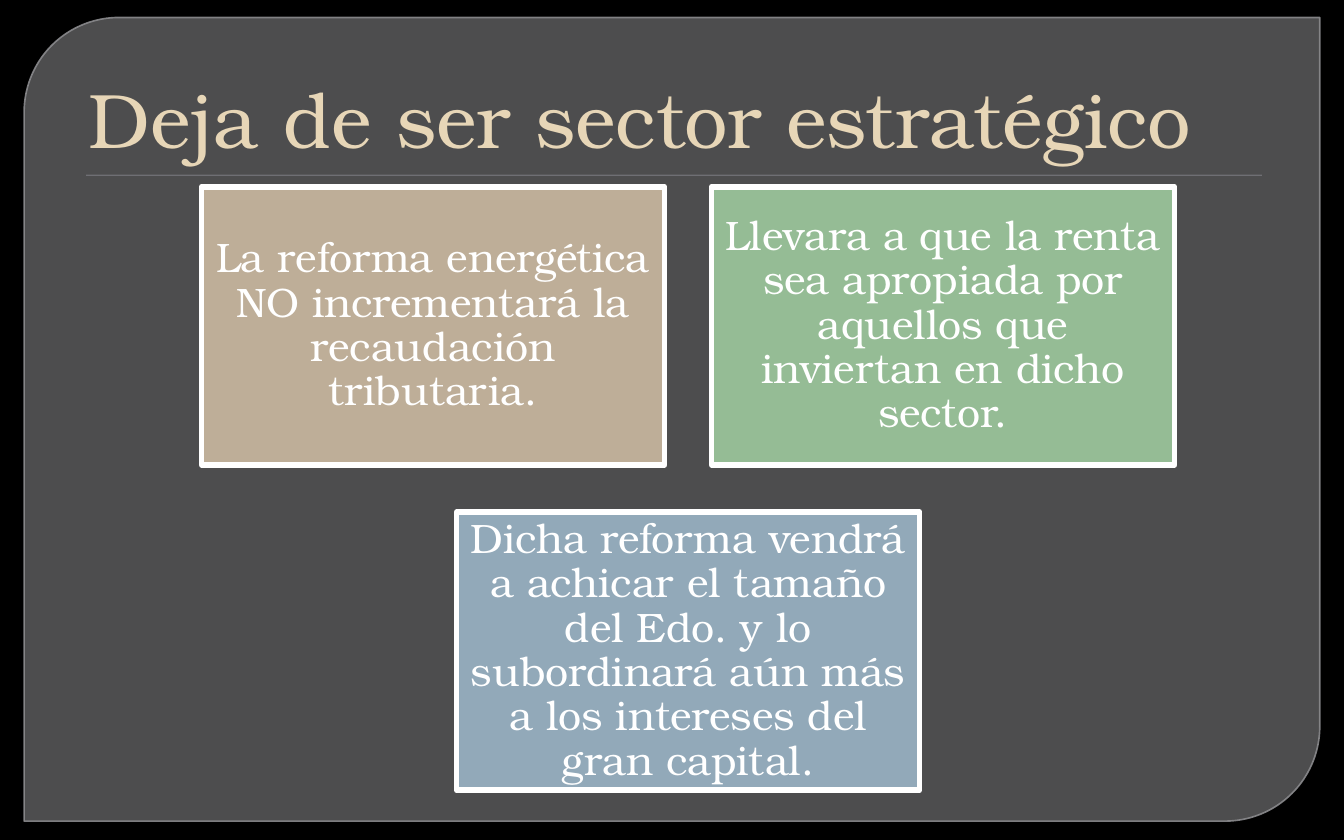
from lxml import etree
from pptx import Presentation
from pptx.dml.color import RGBColor
from pptx.enum.shapes import MSO_SHAPE
from pptx.enum.text import MSO_ANCHOR, PP_ALIGN
from pptx.oxml.ns import qn
from pptx.util import Inches, Pt

RECT = MSO_SHAPE.RECTANGLE
PANEL = MSO_SHAPE.ROUND_2_DIAG_RECTANGLE
MIDDLE, BOTTOM = MSO_ANCHOR.MIDDLE, MSO_ANCHOR.BOTTOM
LEFT, CENTER = PP_ALIGN.LEFT, PP_ALIGN.CENTER
FONT = "TeX Gyre Bonum"
COLORS = {
    "background": "000000", "panel": "777779", "panel_line": "8D8D90",
    "rule": "6F6F74", "title": "E7D6B7", "white": "FFFFFF",
    "tan": "BEAE98", "green": "95BC95", "blue": "92A9B9",
}
CARDS = [
    ("tan", "La reforma energética NO incrementará la recaudación tributaria."),
    ("green", "Llevara a que la renta sea apropiada por aquellos que "
              "inviertan en dicho sector."),
    ("blue", "Dicha reforma vendrá a achicar el tamaño del Edo. y lo "
             "subordinará aún más a los intereses del gran capital."),
]


def rgb(name):
    """Return the named colour."""
    return RGBColor.from_string(COLORS[name])


def set_alpha(fill, percent):
    """Make a solid fill partly transparent."""
    color = fill._xPr.find(qn("a:solidFill"))[0]
    etree.SubElement(color, qn("a:alpha"), val=str(percent * 1000))


def add_box(slide, kind, box, fill, line=None, width=0):
    """Add a filled shape with an optional outline."""
    sp = slide.shapes.add_shape(kind, *(Inches(v) for v in box))
    sp.shadow.inherit = False
    sp.fill.solid()
    sp.fill.fore_color.rgb = rgb(fill)
    if line:
        sp.line.color.rgb = rgb(line)
        sp.line.width = Pt(width)
    else:
        sp.line.fill.background()
    return sp


def write(sp, text, size, color, align, anchor):
    """Write one paragraph into a shape."""
    tf = sp.text_frame
    tf.word_wrap = True
    tf.vertical_anchor = anchor
    p = tf.paragraphs[0]
    p.alignment = align
    r = p.add_run()
    r.text = text
    r.font.name = FONT
    r.font.size = Pt(size)
    r.font.color.rgb = rgb(color)
    return tf


def add_panel(slide, box):
    """Draw the translucent panel with two rounded corners."""
    sp = add_box(slide, PANEL, box, "panel", "panel_line", 0.87)
    sp.adjustments[0] = 0.118
    sp.adjustments[1] = 0
    set_alpha(sp.fill, 65)
    set_alpha(sp.line.fill, 88)


def add_title(slide, box, text):
    """Place the title and the thin rule below it."""
    left, top, width, height = box
    sp = slide.shapes.add_textbox(*(Inches(v) for v in box))
    tf = write(sp, text, 41.4, "title", LEFT, BOTTOM)
    tf.margin_left = Inches(0.16)
    add_box(slide, RECT, (left + 0.14, top + height + 0.03, width - 0.25, 0.01),
            "rule")


def add_cards(slide, box, cards, columns=2, gap=0.35):
    """Lay out cards in rows, each row centred in the box."""
    left, top, width, height = box
    rows = [cards[i:i + columns] for i in range(0, len(cards), columns)]
    card_w = (width - gap * (columns - 1)) / columns
    card_h = (height - gap * (len(rows) - 1)) / len(rows)
    for i, row in enumerate(rows):
        row_w = len(row) * (card_w + gap) - gap
        x = left + (width - row_w) / 2
        y = top + i * (card_h + gap)
        for j, (fill, text) in enumerate(row):
            sp = add_box(slide, RECT, (x + j * (card_w + gap), y, card_w, card_h),
                         fill, "white", 3)
            tf = write(sp, text, 22, "white", CENTER, MIDDLE)
            tf.margin_left = tf.margin_right = Inches(0.09)
            tf.margin_top = tf.margin_bottom = Inches(0.09)
            tf.paragraphs[0].line_spacing = 0.9


def main():
    """Build the slide and save it."""
    prs = Presentation()
    prs.slide_width, prs.slide_height = Inches(10), Inches(6.25)
    slide = prs.slides.add_slide(prs.slide_layouts[6])
    slide.background.fill.solid()
    slide.background.fill.fore_color.rgb = rgb("background")
    add_panel(slide, (0.18, 0.13, 9.64, 5.98))
    add_title(slide, (0.5, 0.23, 9, 1.04), "Deja de ser sector estratégico")
    add_cards(slide, (1.5, 1.39, 7.24, 4.49), CARDS)
    prs.save("out.pptx")


if __name__ == "__main__":
    main()
